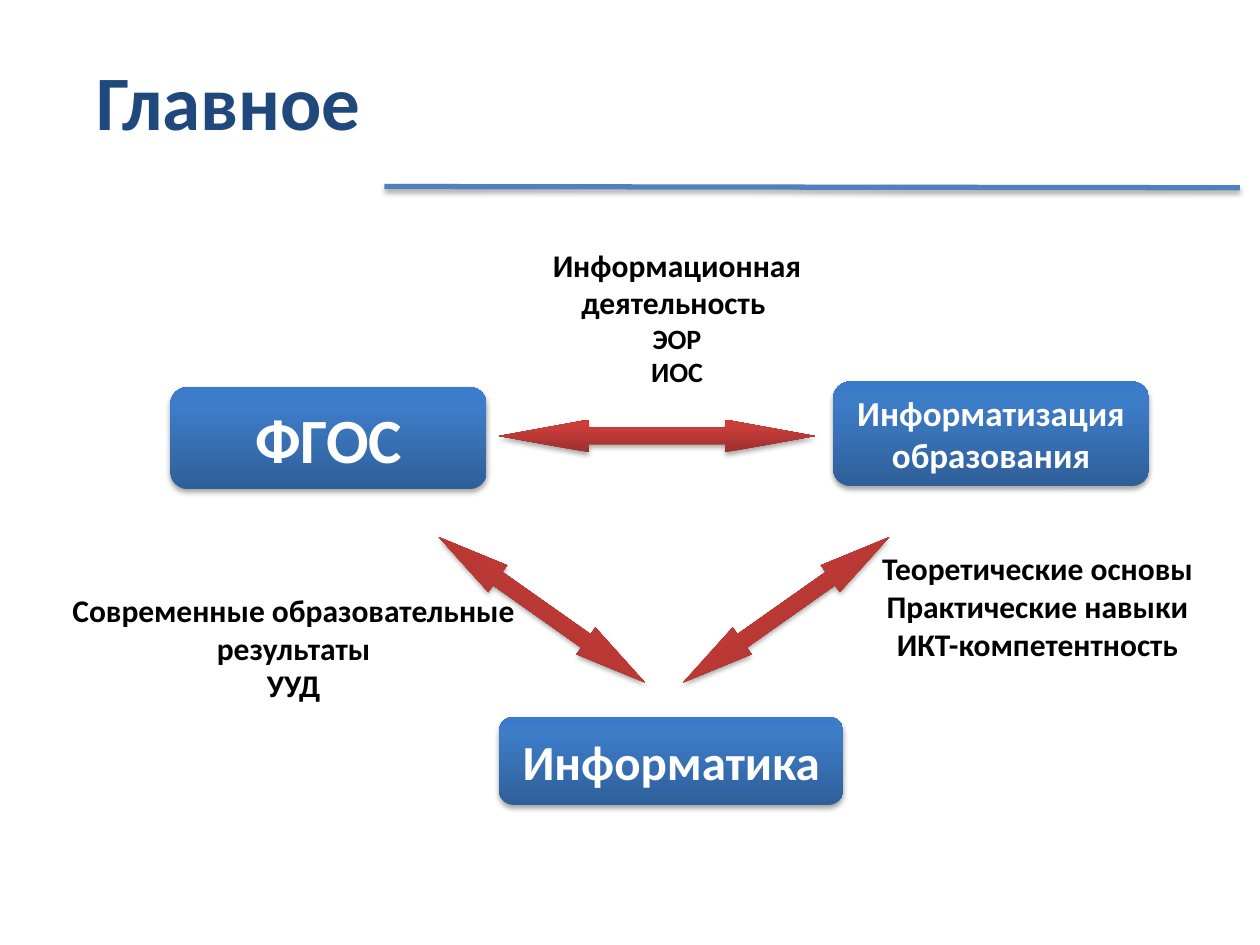
from pptx import Presentation
from pptx.dml.color import RGBColor
from pptx.enum.shapes import MSO_CONNECTOR, MSO_SHAPE
from pptx.enum.text import MSO_ANCHOR, PP_ALIGN
from pptx.oxml import parse_xml
from pptx.oxml.ns import nsdecls
from pptx.util import Pt

COLORS = {
    "title": "1F497D",
    "text": "000000",
    "white": "FFFFFF",
    "rule": "4F81BD",
    "shadow": "000000",
}
GRADIENTS = {
    "blue": {0: "2F5F99", 80: "3D7CC7", 100: "3A7CCB"},
    "red": {0: "9C2F2D", 80: "CB3E3A", 100: "CE3B37"},
}


def write_text(tf, lines, sizes, color="text", align=PP_ALIGN.CENTER,
               anchor=MSO_ANCHOR.TOP, font="Calibri"):
    tf.word_wrap = True
    tf.vertical_anchor = anchor
    for i, (line, size) in enumerate(zip(lines, sizes)):
        p = tf.paragraphs[0] if i == 0 else tf.add_paragraph()
        p.alignment = align
        r = p.add_run()
        r.text = line
        r.font.name = font
        r.font.size = Pt(size)
        r.font.bold = True
        r.font.color.rgb = RGBColor.from_string(COLORS[color])


class Deck:
    def __init__(self, prs):
        self.prs = prs
        self.s = prs.slides.add_slide(prs.slide_layouts[6])

    def add_shadow(self, sp):
        sp._element.spPr.append(parse_xml(
            f'<a:effectLst {nsdecls("a")}><a:outerShdw blurRad="{Pt(3.1)}" '
            f'dist="{Pt(1.8)}" dir="5400000" rotWithShape="0">'
            f'<a:srgbClr val="{COLORS["shadow"]}"><a:alpha val="35000"/>'
            '</a:srgbClr></a:outerShdw></a:effectLst>'))

    def shape(self, kind, box, gradient, adjustments, rotation=0):
        sp = self.s.shapes.add_shape(kind, *map(Pt, box))
        for i, value in enumerate(adjustments):
            sp.adjustments[i] = value
        sp.rotation = rotation
        sp.line.fill.background()
        stops = "".join(
            f'<a:gs pos="{pos * 1000}"><a:srgbClr val="{color}"/></a:gs>'
            for pos, color in GRADIENTS[gradient].items())
        sp._element.spPr.find("{*}ln").addprevious(parse_xml(
            f'<a:gradFill {nsdecls("a")} rotWithShape="1"><a:gsLst>{stops}'
            '</a:gsLst><a:lin ang="16200000" scaled="0"/></a:gradFill>'))
        self.add_shadow(sp)
        return sp

    def node(self, text, size, box):
        sp = self.shape(MSO_SHAPE.ROUNDED_RECTANGLE, box, "blue", [0.167])
        write_text(sp.text_frame, [text], [size], color="white",
                   anchor=MSO_ANCHOR.MIDDLE)

    def arrow(self, box, head, rotation=0):
        self.shape(MSO_SHAPE.LEFT_RIGHT_ARROW, box, "red", [0.5, head], rotation)

    def label(self, box, lines, sizes, **style):
        sp = self.s.shapes.add_textbox(*map(Pt, box))
        write_text(sp.text_frame, lines, sizes, **style)

    def rule(self, x1, y1, x2, y2):
        sp = self.s.shapes.add_connector(
            MSO_CONNECTOR.STRAIGHT, *map(Pt, (x1, y1, x2, y2)))
        sp.line.color.rgb = RGBColor.from_string(COLORS["rule"])
        sp.line.width = Pt(3)
        self.add_shadow(sp)


def main():
    prs = Presentation()
    prs.slide_width, prs.slide_height = Pt(720), Pt(540)
    deck = Deck(prs)

    deck.label((48, 18, 642, 78), ["Главное"], [44], color="title",
               align=PP_ALIGN.LEFT, anchor=MSO_ANCHOR.MIDDLE)

    deck.node("ФГОС", 36, (97.4, 221.2, 180.7, 58.3))
    deck.node("Информатизация образования", 20, (476, 218, 180.7, 59.8))
    deck.node("Информатика", 28, (285.1, 409.6, 196.8, 50.4))

    deck.arrow((237.6, 339.1, 144, 18.7), 2.2, 35.2)
    deck.arrow((285.1, 239.8, 180.7, 18.7), 2.75)
    deck.arrow((377.3, 339.1, 144, 18.7), 2.2, -35.2)

    deck.label((255.6, 136.8, 262.6, 102.2),
               ["Информационная деятельность ", "ЭОР", "ИОС"], [18, 16, 16])
    deck.label((482.4, 310.3, 221, 110.2),
               ["Теоретические основы", "Практические навыки", "ИКТ-компетентность"],
               [18] * 3)
    deck.label((33.8, 334.1, 268, 126),
               ["Современные образовательные результаты", "УУД"], [18] * 2)

    deck.rule(219.6, 106.6, 708.5, 107.3)
    prs.save("out.pptx")


if __name__ == "__main__":
    main()
